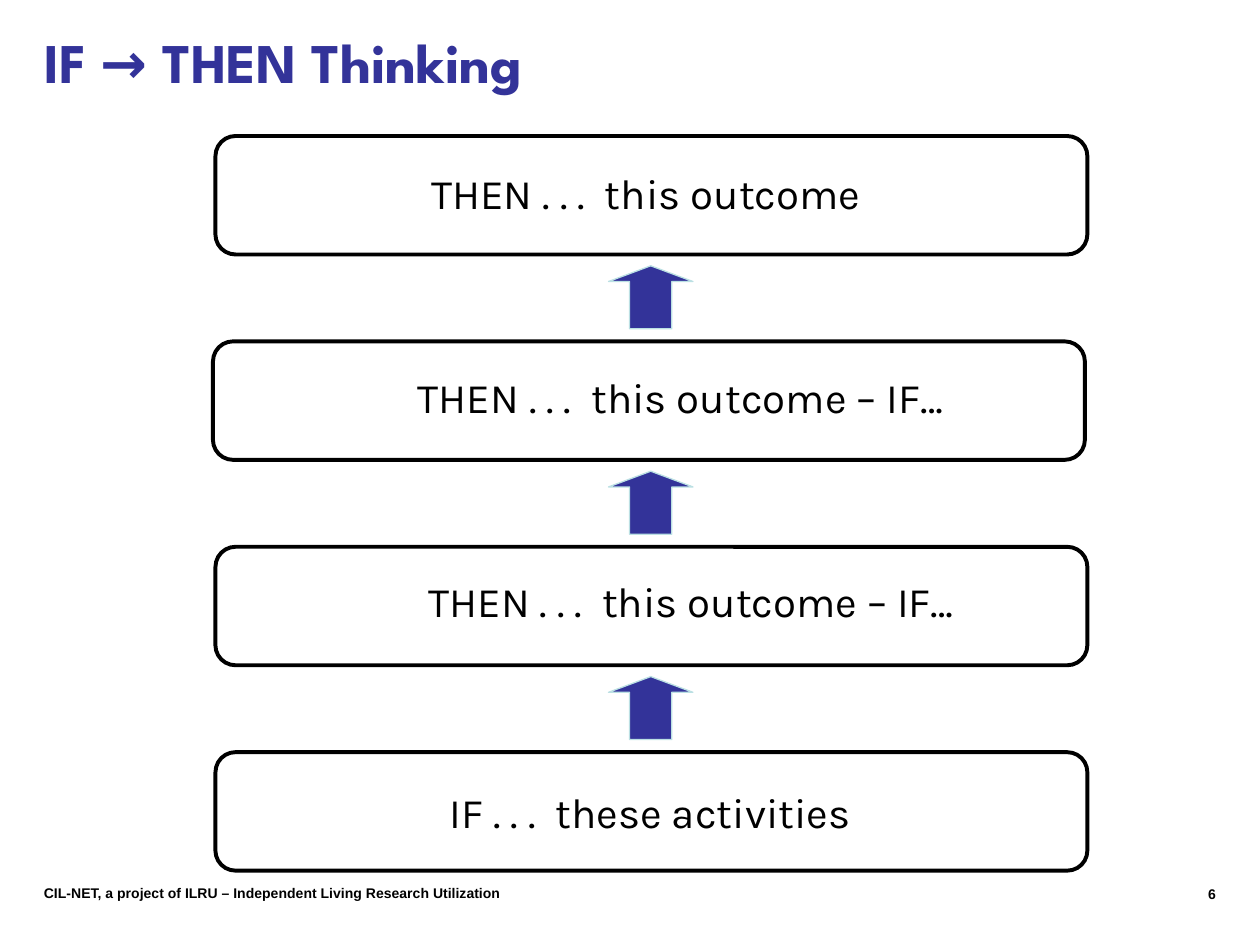
"""Build the IF-THEN thinking slide: four stacked steps joined by upward arrows."""
import pptx
import pptx.util
import pptx.dml.color
import pptx.enum.shapes
import pptx.enum.text

BLACK = pptx.dml.color.RGBColor(0x00, 0x00, 0x00)
INDIGO = pptx.dml.color.RGBColor(0x33, 0x33, 0x99)
PALE_TEAL = pptx.dml.color.RGBColor(0xBB, 0xE0, 0xE3)
ALIGN = pptx.enum.text.PP_ALIGN
SHAPE = pptx.enum.shapes.MSO_SHAPE

TITLE = {"name": "League Spartan", "size": pptx.util.Pt(32), "bold": True}
STEP = {"name": "Karla", "size": pptx.util.Pt(24), "bold": False}
FOOTER = {"name": "Arial", "size": pptx.util.Pt(8), "bold": True}
FRAME = {
    "word_wrap": True,
    "auto_size": pptx.enum.text.MSO_AUTO_SIZE.NONE,
    "vertical_anchor": pptx.enum.text.MSO_ANCHOR.TOP,
}

FIRST_ROW, ROW_PITCH = 10.8, 16.3
STEPS = [
    ("THEN . . .  this outcome ", 17.1, 27.9, 47.5, 2),
    ("THEN . . .  this outcome – IF…", 16.9, 28.8, 50.4, 1.9),
    ("THEN . . .  this outcome – IF…", 17.1, 28.8, 52.1, 1.8),
    ("IF . . .  these activities", 17.1, 31.2, 40.8, 2.2),
]


class SlideBuilder:
    """Hold the style and current slide; lengths are cells of a 100 by 75 grid."""

    def __init__(self, prs):
        self.s = prs.slides.add_slide(prs.slide_layouts[5])
        self.cell = prs.slide_width / 100

    def box(self, *cells):
        return [round(c * self.cell) for c in cells]

    def fill_text(self, sp, text, style, color, align):
        tf = sp.text_frame
        for key, value in FRAME.items():
            setattr(tf, key, value)
        p = tf.paragraphs[0]
        p.alignment = align
        r = p.add_run()
        r.text = text
        for key, value in style.items():
            setattr(r.font, key, value)
        r.font.color.rgb = color

    def title(self, text, *cells):
        sp = self.s.shapes.title
        sp.left, sp.top, sp.width, sp.height = self.box(*cells)
        self.fill_text(sp, text, TITLE, INDIGO, ALIGN.LEFT)

    def text(self, text, style, align, *cells):
        sp = self.s.shapes.add_textbox(*self.box(*cells))
        self.fill_text(sp, text, style, BLACK, align)

    def shape(self, kind, adjustments, fill, line, weight, *cells):
        sp = self.s.shapes.add_shape(kind, *self.box(*cells))
        sp.shadow.inherit = False
        for i, value in enumerate(adjustments):
            sp.adjustments[i] = value
        if fill is None:
            sp.fill.background()
        else:
            sp.fill.solid()
            sp.fill.fore_color.rgb = fill
        sp.line.color.rgb = line
        sp.line.width = pptx.util.Pt(weight)

    def frame(self, *cells):
        self.shape(SHAPE.ROUNDED_RECTANGLE, [0.17], None, BLACK, 2.25, *cells)

    def arrow(self, *cells):
        self.shape(SHAPE.UP_ARROW, [0.5, 0.25], INDIGO, PALE_TEAL, 0.75, *cells)


def main():
    prs = pptx.Presentation()
    prs.slide_width, prs.slide_height = pptx.util.Inches(10), pptx.util.Inches(7.5)
    slide = SlideBuilder(prs)
    slide.title("IF → THEN Thinking", 2.5, 1.7, 89.2, 6.4)
    for i, (text, frame_left, text_left, text_width, drop) in enumerate(STEPS):
        top = FIRST_ROW + i * ROW_PITCH
        slide.frame(frame_left, top, 69.2, 9.4)
        slide.text(text, STEP, ALIGN.CENTER, text_left, top + drop, text_width, 5.1)
        if i < len(STEPS) - 1:
            slide.arrow(48.3, top + 10.3, 6.7, 5)
    slide.text("CIL-NET, a project of ILRU – Independent Living Research Utilization",
               FOOTER, ALIGN.LEFT, 2.5, 69.7, 50, 2.3)
    slide.text("6", FOOTER, ALIGN.RIGHT, 90.8, 69.8, 6.7, 2.7)
    prs.save("out.pptx")


if __name__ == "__main__":
    main()
